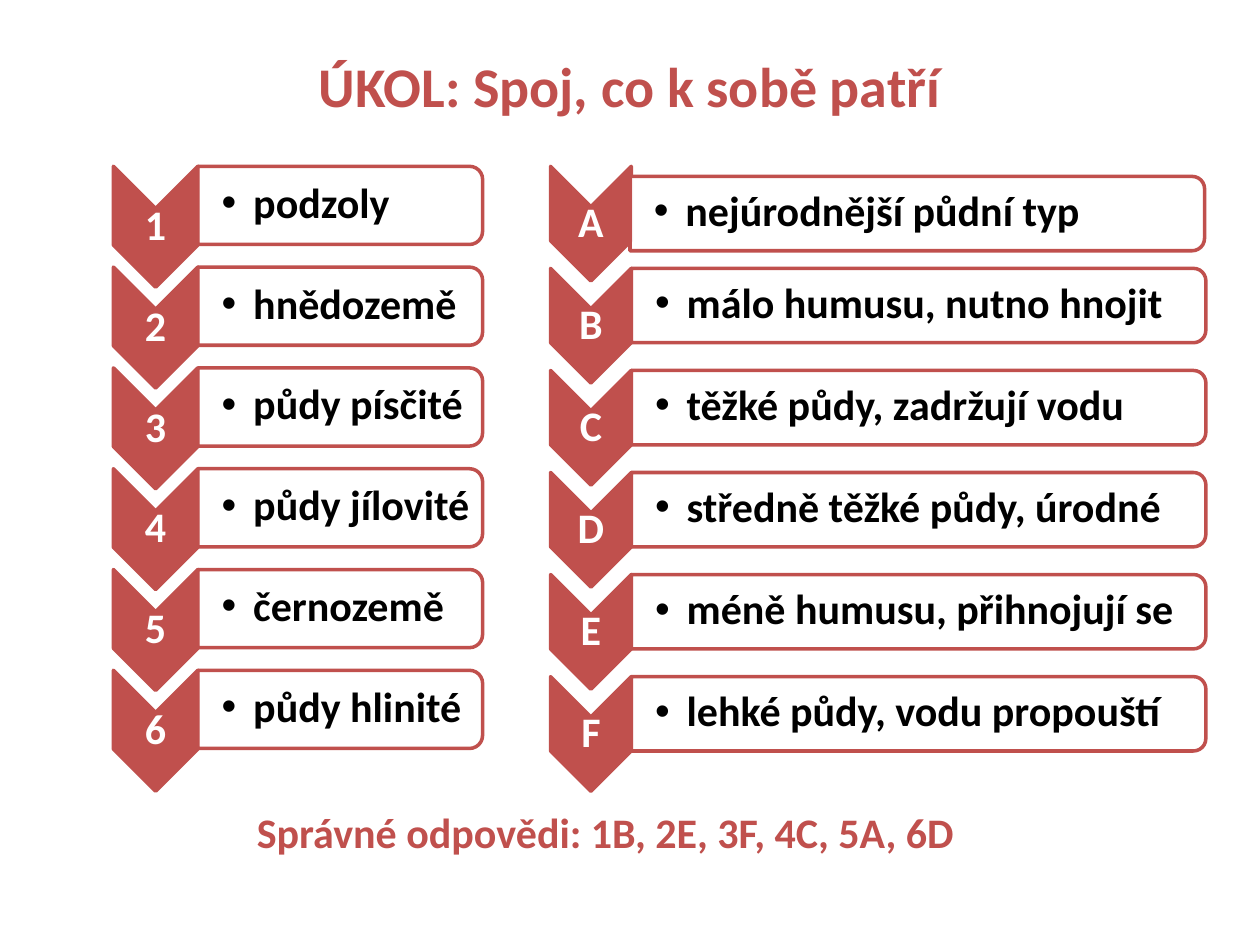
from lxml import etree
from pptx import Presentation
from pptx.dml.color import RGBColor
from pptx.enum.shapes import MSO_SHAPE
from pptx.enum.text import MSO_ANCHOR, MSO_AUTO_SIZE, PP_ALIGN
from pptx.oxml.ns import qn
from pptx.util import Inches, Pt

CHEVRON = MSO_SHAPE.CHEVRON
ROUNDED_BAR = MSO_SHAPE.ROUND_2_SAME_RECTANGLE
MIDDLE = MSO_ANCHOR.MIDDLE
TOP = MSO_ANCHOR.TOP
CENTER = PP_ALIGN.CENTER
LEFT = PP_ALIGN.LEFT
GROW = MSO_AUTO_SIZE.SHAPE_TO_FIT_TEXT

RED = "C0504D"
WHITE = "FFFFFF"
BLACK = "000000"

SOILS = ["podzoly", "hnědozemě", "půdy písčité", "půdy jílovité",
         "černozemě", "půdy hlinité"]
TRAITS = ["nejúrodnější půdní typ", "málo humusu, nutno hnojit",
          "těžké půdy, zadržují vodu", "středně těžké půdy, úrodné",
          "méně humusu, přihnojují se", "lehké půdy, vodu propouští"]


def color(value):
    return RGBColor.from_string(value)


def add_bullet(para):
    properties = para._p.get_or_add_pPr()
    properties.set("marL", str(Inches(0.25)))
    properties.set("indent", str(-Inches(0.25)))
    etree.SubElement(properties, qn("a:buFont")).set("typeface", "Arial")
    etree.SubElement(properties, qn("a:buChar")).set("char", "•")


def add_text(shapes, text, left, top, width, height, size=24, fill=RED,
             align=LEFT, anchor=MIDDLE, insets=(0.1, 0.05, 0.1, 0.05),
             spacing=None, bullet=False, wrap=True):
    box = shapes.add_textbox(Inches(left), Inches(top), Inches(width), Inches(height))
    frame = box.text_frame
    frame.word_wrap = wrap
    frame.vertical_anchor = anchor
    (frame.margin_left, frame.margin_top,
     frame.margin_right, frame.margin_bottom) = map(Inches, insets)
    para = frame.paragraphs[0]
    para.alignment = align
    if spacing:
        para.line_spacing = spacing
    if bullet:
        para.level = 1
        add_bullet(para)
    span = para.add_run()
    span.text = text
    span.font.name = "Calibri"
    span.font.size = Pt(size)
    span.font.bold = True
    span.font.color.rgb = color(fill)
    return box


def add_turned_shape(shapes, kind, left, top, width, height, fill, alpha=None):
    shift = (width - height) / 2
    shape = shapes.add_shape(kind, Inches(left + shift), Inches(top - shift),
                             Inches(height), Inches(width))
    shape.rotation = 90
    shape.shadow.inherit = False
    shape.fill.solid()
    shape.fill.fore_color.rgb = color(fill)
    shape.line.color.rgb = color(RED)
    shape.line.width = Pt(2)
    if alpha:
        tint = shape._element.spPr.find(qn("a:solidFill"))[0]
        etree.SubElement(tint, qn("a:alpha")).set("val", str(alpha * 1000))


def add_marker(shapes, label, left, top, width, height):
    add_turned_shape(shapes, CHEVRON, left, top, width, height, RED)
    add_text(shapes, label, left, top + width / 2, width, height - width,
             fill=WHITE, align=CENTER, insets=(0.02,) * 4, spacing=0.9)


def add_bar(shapes, text, left, top, width, height):
    add_turned_shape(shapes, ROUNDED_BAR, left, top, width, height, WHITE, alpha=90)
    add_text(shapes, text, left, top + 0.02, width - 0.03, height - 0.05,
             fill=BLACK, insets=(0.19, 0.02, 0.02, 0.02), spacing=0.9, bullet=True)


def add_column(page, labels, texts, left, top, pitch, marker_size, bar_size,
               first_shift=(0, 0)):
    shapes = page.shapes.add_group_shape().shapes
    marker_width, marker_height = marker_size
    for row, (label, text) in enumerate(zip(labels, texts)):
        row_top = top + row * pitch
        shift_x, shift_y = first_shift if row == 0 else (0, 0)
        add_marker(shapes, label, left, row_top, marker_width, marker_height)
        add_bar(shapes, text, left + marker_width + shift_x, row_top + shift_y, *bar_size)


def add_title(page, left, top, width, height):
    add_text(page.shapes, "ÚKOL: Spoj, co k sobě patří", left, top, width, height,
             size=32, align=CENTER)


def add_answers(page, left, top, width, height):
    box = add_text(page.shapes, "Správné odpovědi: 1B, 2E, 3F, 4C, 5A, 6D",
                   left, top, width, height, anchor=TOP, wrap=False)
    box.text_frame.auto_size = GROW


def main():
    deck = Presentation()
    deck.slide_width = Inches(10)
    deck.slide_height = Inches(7.5)
    page = deck.slides.add_slide(deck.slide_layouts[6])
    add_title(page, 0.5, 0.3, 9, 0.75)
    add_column(page, "123456", SOILS, 0.9, 1.32, 0.8, (0.67, 0.96), (2.26, 0.62))
    add_column(page, "ABCDEF", TRAITS, 4.37, 1.32, 0.81, (0.64, 0.91), (4.56, 0.59),
               first_shift=(-0.01, 0.08))
    add_answers(page, 1.94, 6.35, 5.83, 0.5)
    deck.save("out.pptx")


if __name__ == "__main__":
    main()
